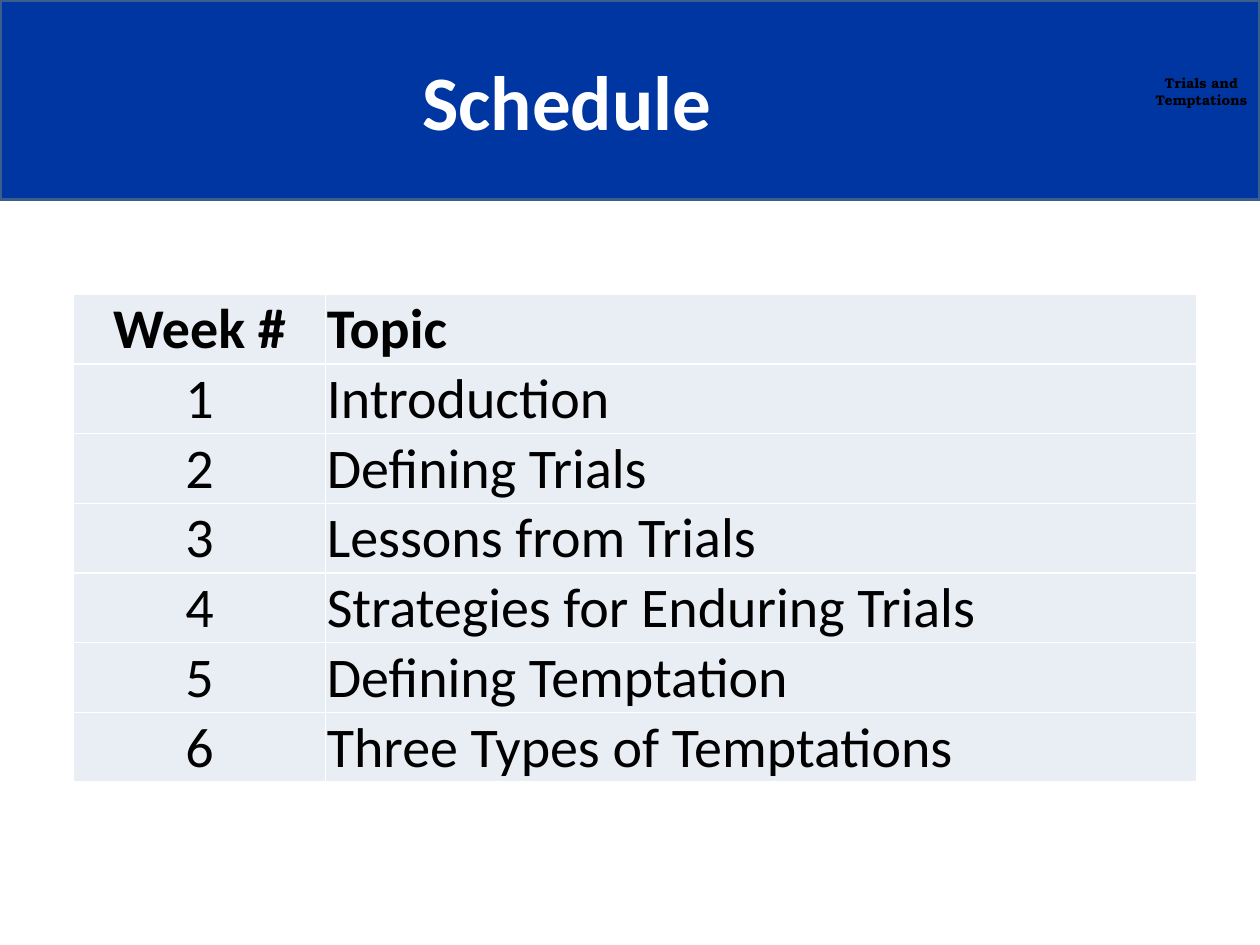
from lxml.etree import SubElement
from pptx import Presentation
from pptx.dml.color import RGBColor
from pptx.enum.shapes import MSO_SHAPE
from pptx.enum.text import MSO_ANCHOR, PP_ALIGN
from pptx.oxml.ns import qn
from pptx.util import Pt

COLORS = {"band": "0036A2", "edge": "3A5F8C", "cell": "E9EDF4",
          "white": "FFFFFF", "black": "000000"}
TOPICS = ["Introduction", "Defining Trials", "Lessons from Trials",
          "Strategies for Enduring Trials", "Defining Temptation",
          "Three Types of Temptations"]
ROWS = [("Week #", "Topic")] + [(str(week), topic) for week, topic in enumerate(TOPICS, 1)]


class Deck:
    fonts = {
        "title": {"name": "Calibri", "size": Pt(44), "bold": True},
        "label": {"name": "TeX Gyre Bonum", "size": Pt(8), "bold": True},
        "head": {"name": "Calibri", "size": Pt(32), "bold": True},
        "cell": {"name": "Calibri", "size": Pt(32), "bold": False},
    }
    inset = {"margin_left": Pt(0.72), "margin_right": Pt(0.72),
             "margin_top": Pt(0.72), "margin_bottom": 0,
             "vertical_anchor": MSO_ANCHOR.BOTTOM}

    def __init__(self, width, height):
        self.prs = Presentation()
        self.prs.slide_width, self.prs.slide_height = Pt(width), Pt(height)
        self.slide = self.prs.slides.add_slide(self.prs.slide_layouts[5])

    def color(self, name):
        return RGBColor.from_string(COLORS[name])

    def apply(self, item, values):
        for key, value in values.items():
            setattr(item, key, value)

    def text(self, frame, words, style, color, align=PP_ALIGN.CENTER):
        para = frame.paragraphs[0]
        para.text = words
        para.alignment = align
        for run in para.runs:
            self.apply(run.font, self.fonts[style])
            run.font.color.rgb = self.color(color)

    def band(self, *box):
        shape = self.slide.shapes.add_shape(MSO_SHAPE.RECTANGLE, *map(Pt, box))
        shape.shadow.inherit = False
        shape.fill.solid()
        shape.fill.fore_color.rgb = self.color("band")
        shape.line.color.rgb = self.color("edge")
        shape.line.width = Pt(2)

    def label(self, words, *box):
        frame = self.slide.shapes.add_textbox(*map(Pt, box)).text_frame
        frame.word_wrap = True
        self.text(frame, words, "label", "black")

    def title(self, words, *box):
        shape = self.slide.shapes.title
        shape.element.getparent().append(shape.element)
        self.apply(shape, dict(zip(("left", "top", "width", "height"), map(Pt, box))))
        shape.text_frame.vertical_anchor = MSO_ANCHOR.MIDDLE
        self.text(shape.text_frame, words, "title", "white")

    def border(self, cell):
        props = cell._tc.get_or_add_tcPr()
        for side in ("lnL", "lnR", "lnT", "lnB"):
            line = SubElement(props, qn(f"a:{side}"), w=str(Pt(1)))
            fill = SubElement(line, qn("a:solidFill"))
            SubElement(fill, qn("a:srgbClr"), val=COLORS["white"])

    def table(self, rows, left, top, widths, height):
        box = map(Pt, (left, top, sum(widths), height * len(rows)))
        grid = self.slide.shapes.add_table(len(rows), len(widths), *box).table
        for col, width in zip(grid.columns, widths):
            col.width = Pt(width)
        for r, row in enumerate(rows):
            for c, words in enumerate(row):
                cell = grid.cell(r, c)
                self.border(cell)
                self.apply(cell, self.inset)
                cell.fill.solid()
                cell.fill.fore_color.rgb = self.color("cell")
                align = PP_ALIGN.LEFT if c else PP_ALIGN.CENTER
                self.text(cell.text_frame, words, "cell" if r else "head", "black", align)


def main():
    deck = Deck(720, 540)
    deck.band(0, 0, 720, 114)
    deck.label("Trials and\vTemptations", 647, 39, 79, 26.6)
    deck.title("Schedule", 0, 12, 648, 90)
    deck.table(ROWS, 42, 168, (144, 498), 39.8)
    deck.prs.save("out.pptx")


if __name__ == "__main__":
    main()
